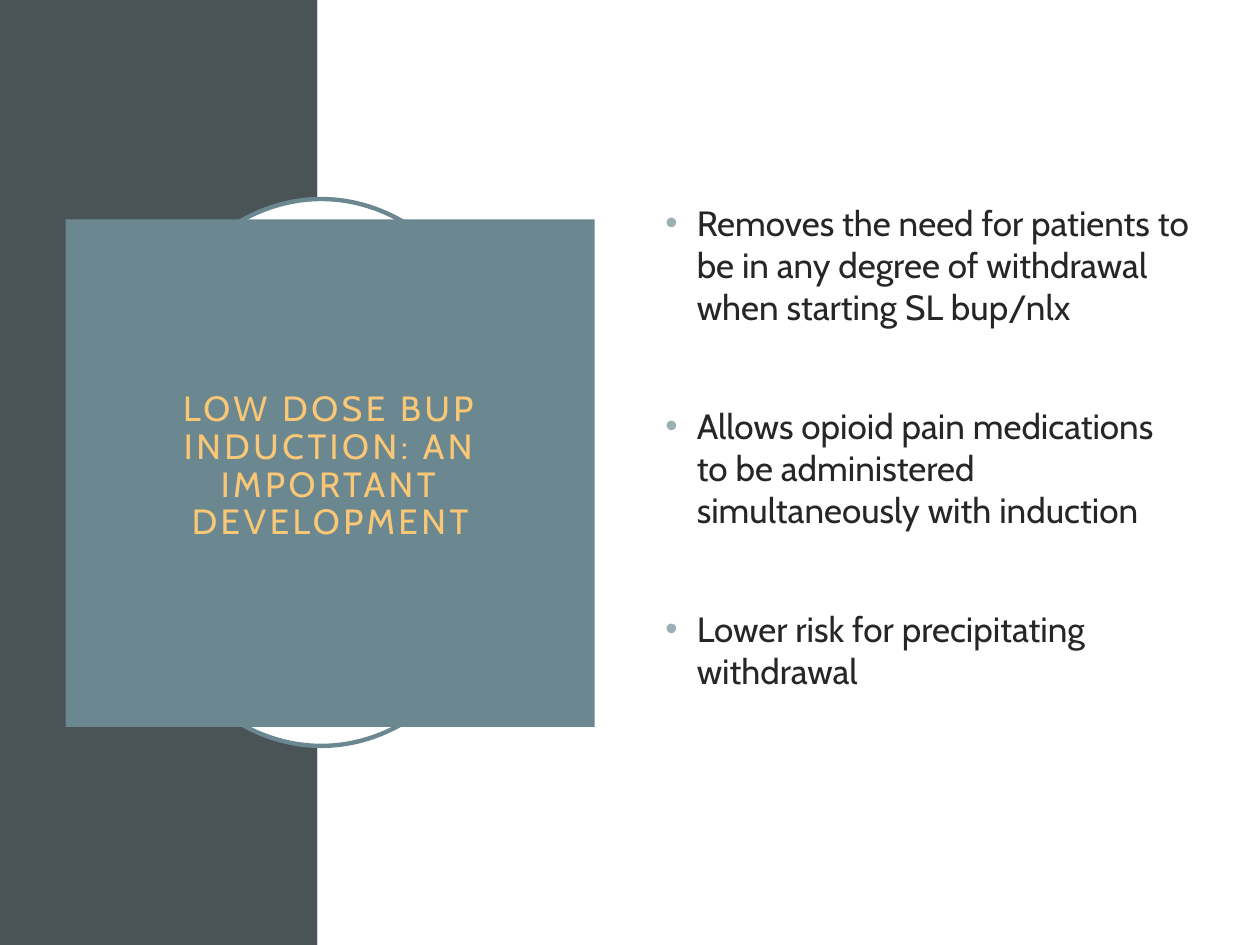
from lxml import etree
from pptx import Presentation
from pptx.dml.color import RGBColor as Rgb
from pptx.enum import shapes as kinds, text as txt
from pptx.oxml.ns import qn
from pptx.util import Inches, Pt

# Content
HEAD = "LOW DOSE BUP INDUCTION: AN IMPORTANT DEVELOPMENT"
POINTS = [
    "Removes the need for patients to be in any degree of withdrawal when starting SL bup/nlx",
    "Allows opioid pain medications to be administered simultaneously with induction",
    "Lower risk for precipitating withdrawal",
]
THEME = dict(font="Cabin", size=20, gap=44, dark="4A5356", teal="6B8891",
             gold="FAC777", ink="262626", dot="9BAFB5", white="FFFFFF")
KIND = kinds.MSO_SHAPE
DECOR = [  # kind, box, fill, line
    (KIND.RECTANGLE, (0, 0, 2.52, 7.5), "dark", None),
    (KIND.RECTANGLE, (2.52, 0, 7.48, 7.5), "white", None),
    (KIND.OVAL, (0.92, 1.58, 3.26, 4.34), "white", "teal"),
]


def color(name):
    return Rgb.from_string(THEME[name])


def paint(shape, fill):
    shape.fill.solid()
    shape.fill.fore_color.rgb = color(fill)


def setup(shape, box, pads, anchor):
    """Place a placeholder, bring it to the front and set its frame."""
    shape.left, shape.top, shape.width, shape.height = map(Inches, box)
    shape.element.getparent().append(shape.element)
    frame = shape.text_frame
    frame.word_wrap, frame.auto_size = True, txt.MSO_AUTO_SIZE.NONE
    frame.vertical_anchor = anchor
    (frame.margin_left, frame.margin_top,
     frame.margin_right, frame.margin_bottom) = map(Inches, pads)
    return frame


def style(para, ink):
    font = para.runs[0].font
    font.name, font.size = THEME["font"], Pt(THEME["size"])
    font.color.rgb = color(ink)
    return font


def bullet(para):
    props = para._p.get_or_add_pPr()
    props.set("marL", str(Inches(0.25)))
    props.set("indent", str(-Inches(0.25)))
    tint = etree.SubElement(props, qn("a:buClr"))
    etree.SubElement(tint, qn("a:srgbClr"), val=THEME["dot"])
    etree.SubElement(props, qn("a:buFont"), typeface="Arial")
    etree.SubElement(props, qn("a:buChar"), char="•")


deck = Presentation()
deck.slide_width, deck.slide_height = Inches(10), Inches(7.5)
slide = deck.slides.add_slide(deck.slide_layouts[1])
title, body = slide.placeholders

# Side band, white field and ring
for kind, box, fill, line in DECOR:
    shape = slide.shapes.add_shape(kind, *map(Inches, box))
    shape.shadow.inherit = False
    paint(shape, fill)
    if line:
        shape.line.color.rgb = color(line)
        shape.line.width = Pt(2.5)
    else:
        shape.line.fill.background()

# Title block
paint(title, "teal")
frame = setup(title, (0.52, 1.74, 4.2, 4.03), (0.82, 0.2, 0.82, 0.3),
              txt.MSO_ANCHOR.MIDDLE)
frame.text = HEAD
para = frame.paragraphs[0]
para.alignment, para.line_spacing = txt.PP_ALIGN.CENTER, 0.9
style(para, "gold")
para.runs[0].font._element.set("spc", "200")

# Bullet list
frame = setup(body, (5.18, 1.49, 4.36, 4.43), (0.1, 0.11, 0.1, 0.05),
              txt.MSO_ANCHOR.TOP)
frame.text = "\n".join(POINTS)
for i, para in enumerate(frame.paragraphs):
    para.alignment, para.line_spacing = txt.PP_ALIGN.LEFT, 1.0
    para.space_before = Pt(THEME["gap"] if i else 0)
    para.space_after = Pt(0)
    bullet(para)
    style(para, "ink")

deck.save("out.pptx")
